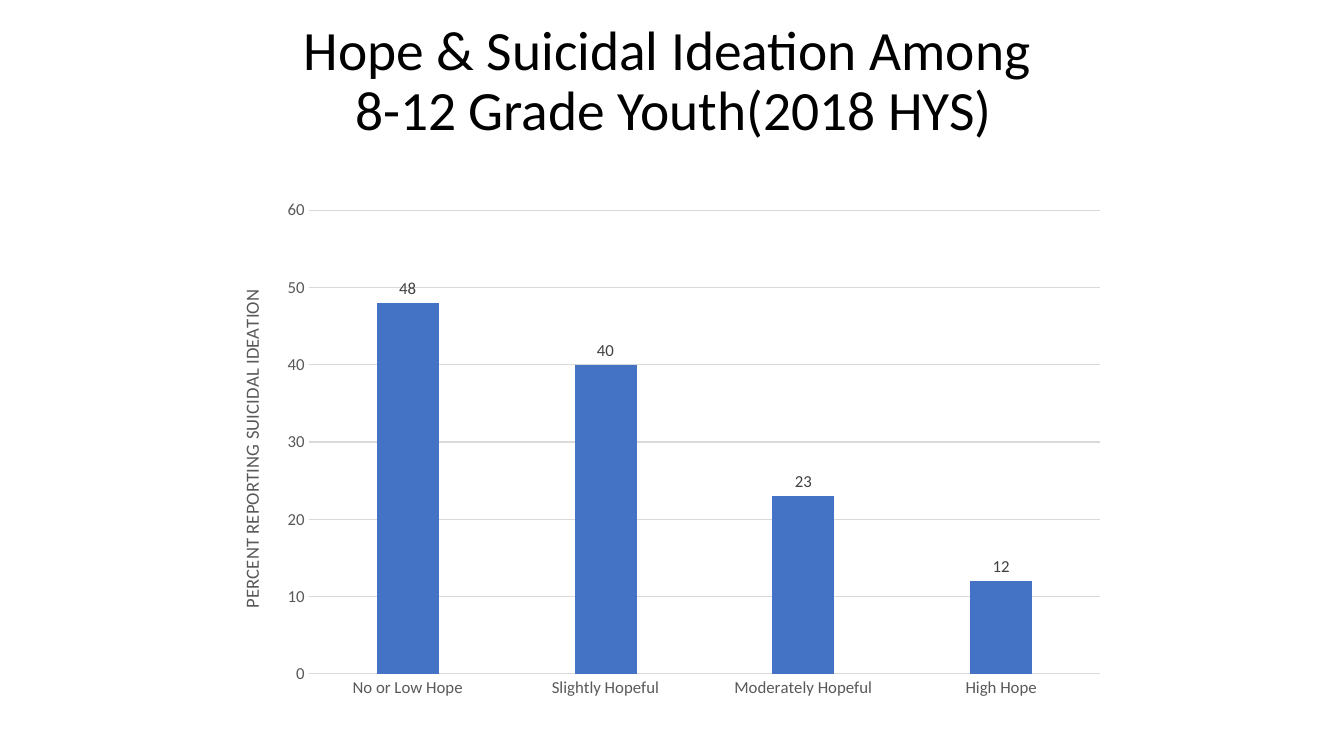
from dataclasses import dataclass

from lxml import etree
from pptx import Presentation
from pptx import util as u
from pptx.chart.data import CategoryChartData
from pptx.dml.color import RGBColor
from pptx.enum import chart as ch, text
from pptx.oxml.ns import qn


@dataclass(frozen=True)
class Theme:
    font: str = "Calibri"
    ink: str = "000000"
    label: str = "404040"
    axis: str = "595959"
    rule: str = "D9D9D9"
    bar: str = "4472C4"
    title_size: float = 39.6
    axis_title_size: float = 13.3
    chart_size: float = 12


THEME = Theme()
WIDTH, HEIGHT = u.Inches(13.33), u.Inches(7.5)
HOPE_LEVELS = {
    "No or Low Hope": 48,
    "Slightly Hopeful": 40,
    "Moderately Hopeful": 23,
    "High Hope": 12,
}
PLOT_SHARES = {"x": 0.1, "y": 0.04, "w": 0.88, "h": 0.895}


def set_all(target, values):
    for name, value in values.items():
        setattr(target, name, value)


def style_font(font, size, color):
    set_all(font, {"name": THEME.font, "size": u.Pt(size), "bold": False})
    font.color.rgb = RGBColor.from_string(color)


def style_rule(line):
    line.color.rgb = RGBColor.from_string(THEME.rule)
    line.width = u.Pt(0.75)


def place_plot(chart):
    plot_area = chart.plots[0]._element.getparent()
    for layout in plot_area.findall(qn("c:layout")):
        plot_area.remove(layout)
    layout = etree.Element(qn("c:layout"))
    manual = etree.SubElement(layout, qn("c:manualLayout"))
    settings = {"layoutTarget": "inner", "xMode": "edge", "yMode": "edge", **PLOT_SHARES}
    for name, value in settings.items():
        etree.SubElement(manual, qn(f"c:{name}")).set("val", str(value))
    plot_area.insert(0, layout)


def add_title(slide, box):
    frame = slide.shapes.add_textbox(*box).text_frame
    set_all(frame, {"word_wrap": True, "vertical_anchor": text.MSO_ANCHOR.MIDDLE})
    paragraph = frame.paragraphs[0]
    paragraph.text = "Hope & Suicidal Ideation Among \v8-12 Grade Youth(2018 HYS)"
    set_all(paragraph, {"alignment": text.PP_ALIGN.CENTER, "line_spacing": 0.9})
    for run in paragraph.runs:
        style_font(run.font, THEME.title_size, THEME.ink)


def style_axes(chart):
    levels, percent = chart.category_axis, chart.value_axis
    for axis in (levels, percent):
        set_all(axis, {
            "major_tick_mark": ch.XL_TICK_MARK.NONE,
            "minor_tick_mark": ch.XL_TICK_MARK.NONE,
        })
        style_font(axis.tick_labels.font, THEME.chart_size, THEME.axis)
    style_rule(levels.format.line)
    percent.format.line.fill.background()
    set_all(percent, {
        "minimum_scale": 0, "maximum_scale": 60, "major_unit": 10,
        "has_major_gridlines": True,
    })
    style_rule(percent.major_gridlines.format.line)
    title = percent.axis_title.text_frame
    title.text = "PERCENT REPORTING SUICIDAL IDEATION"
    style_font(title.paragraphs[0].runs[0].font, THEME.axis_title_size, THEME.axis)


def add_hope_chart(slide, box):
    data = CategoryChartData()
    data.categories = list(HOPE_LEVELS)
    data.add_series("Series 1", list(HOPE_LEVELS.values()))
    chart = slide.shapes.add_chart(ch.XL_CHART_TYPE.COLUMN_CLUSTERED, *box, data).chart
    set_all(chart, {"has_legend": False, "has_title": False})
    style_font(chart.font, THEME.chart_size, THEME.ink)
    style_axes(chart)
    plot = chart.plots[0]
    set_all(plot, {
        "gap_width": 219, "overlap": -27, "vary_by_categories": False,
        "has_data_labels": True,
    })
    set_all(plot.data_labels, {
        "show_value": True, "position": ch.XL_LABEL_POSITION.OUTSIDE_END,
    })
    style_font(plot.data_labels.font, THEME.chart_size, THEME.label)
    fill = plot.series[0].format.fill
    fill.solid()
    fill.fore_color.rgb = RGBColor.from_string(THEME.bar)
    place_plot(chart)


def build_chart_slide(presentation):
    slide = presentation.slides.add_slide(presentation.slide_layouts[6])
    left = u.Inches(2.17)
    add_title(slide, (left, u.Inches(0.14), u.Inches(9.02), u.Inches(1.36)))
    add_hope_chart(slide, (left, u.Inches(1.88), u.Inches(8.92), u.Inches(5.14)))


def main():
    presentation = Presentation()
    set_all(presentation, {"slide_width": WIDTH, "slide_height": HEIGHT})
    build_chart_slide(presentation)
    presentation.save("out.pptx")


if __name__ == "__main__":
    main()
